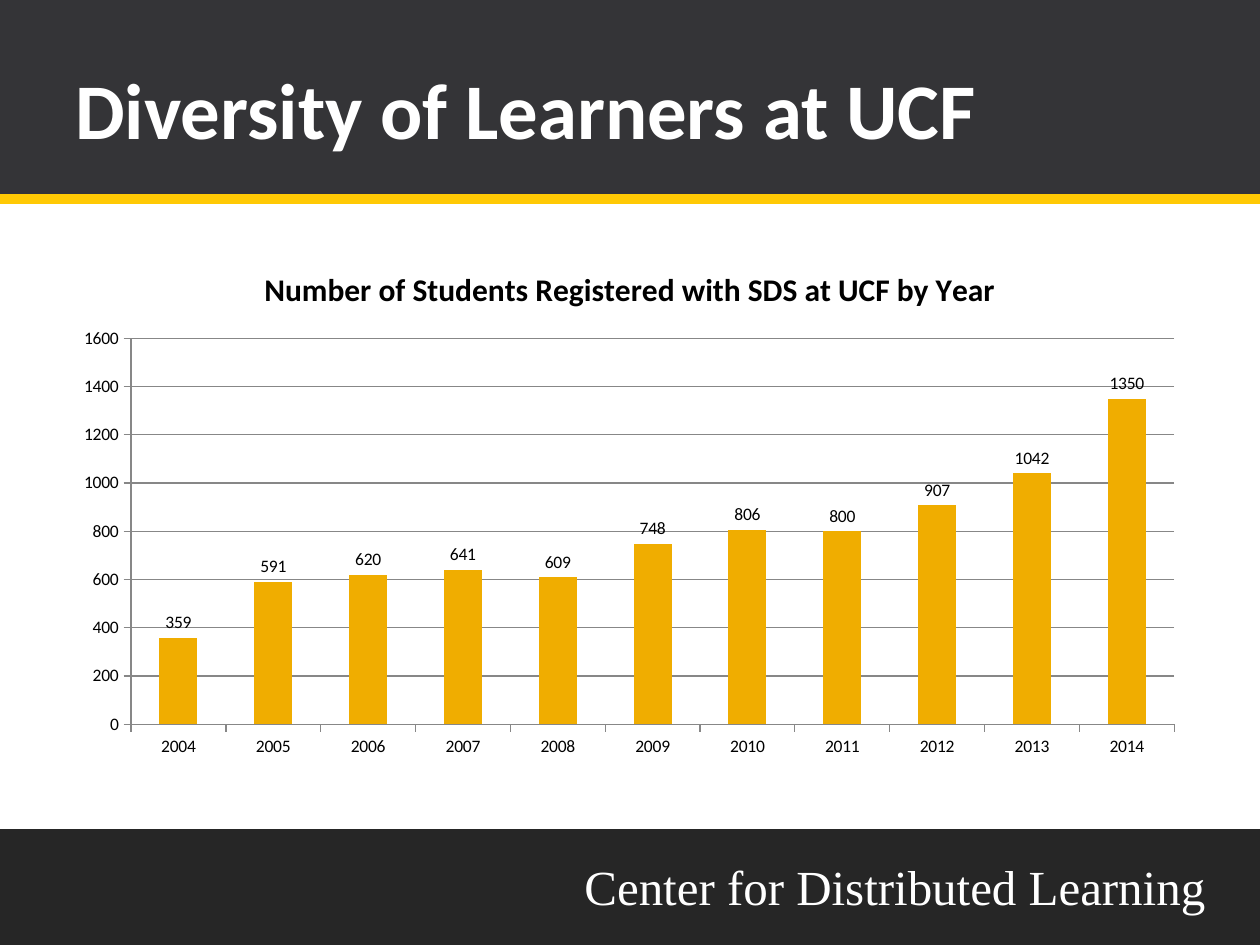
from lxml.etree import SubElement
from pptx import Presentation
from pptx.chart.data import CategoryChartData as ChartData
from pptx.dml.color import RGBColor as RGB
from pptx.enum.chart import XL_CHART_TYPE as CT, XL_LABEL_POSITION as LP, XL_TICK_MARK as TM
from pptx.enum.shapes import MSO_CONNECTOR as CONN, MSO_SHAPE as SHAPE
from pptx.enum.text import MSO_ANCHOR as ANCHOR
from pptx.oxml import parse_xml
from pptx.oxml.ns import nsdecls, qn
from pptx.util import Inches, Pt

COLORS = {"header": "343437", "footer": "262626", "gold": "FFC904", "bar": "F0AD00",
          "white": "FFFFFF", "black": "000000", "grid": "878787"}
FORMATS = {
    "title": {"name": "Calibri", "size": Pt(45), "bold": True, "color": "white"},
    "footer": {"name": "Times New Roman", "size": Pt(28), "color": "white"},
    "chart": {"name": "Calibri", "size": Pt(10), "color": "black"},
    "chart_title": {"name": "Calibri", "size": Pt(18), "bold": True, "color": "black"},
}
STUDENTS = {"2004": 359, "2005": 591, "2006": 620, "2007": 641, "2008": 609, "2009": 748,
            "2010": 806, "2011": 800, "2012": 907, "2013": 1042, "2014": 1350}
PLOT = {"x": 0.06, "y": 0.18, "w": 0.92, "h": 0.74}


class SlideBuilder:
    """Draws styled elements on one slide, placed in inches on a 10 by 7.5 page."""

    def __init__(self, prs):
        self.s = prs.slides.add_slide(prs.slide_layouts[6])

    def style(self, font, kind):
        for key, value in FORMATS[kind].items():
            if key == "color":
                font.color.rgb = RGB.from_string(COLORS[value])
            else:
                setattr(font, key, value)

    def band(self, top, height, color):
        sp = self.s.shapes.add_shape(SHAPE.RECTANGLE, 0, Inches(top), Inches(10), Inches(height))
        sp.shadow.inherit = False
        sp.fill.solid()
        sp.fill.fore_color.rgb = RGB.from_string(COLORS[color])
        sp.line.fill.background()

    def rule(self, top, color, width):
        y = Inches(top)
        line = self.s.shapes.add_connector(CONN.STRAIGHT, 0, y, Inches(10), y)
        line.line.color.rgb = RGB.from_string(COLORS[color])
        line.line.width = Pt(width)
        SubElement(line._element.spPr, qn("a:effectLst"))

    def text(self, box, words, kind):
        tf = self.s.shapes.add_textbox(*map(Inches, box)).text_frame
        tf.word_wrap = True
        tf.vertical_anchor = ANCHOR.MIDDLE
        r = tf.paragraphs[0].add_run()
        r.text = words
        self.style(r.font, kind)

    def column_chart(self, box, title, values):
        data = ChartData()
        data.categories = list(values)
        data.add_series("Series 1", list(values.values()))
        chart = self.s.shapes.add_chart(CT.COLUMN_CLUSTERED, *map(Inches, box), data).chart
        self.style(chart.font, "chart")
        chart.has_legend = False
        chart.has_title = True
        r = chart.chart_title.text_frame.paragraphs[0].add_run()
        r.text = title
        self.style(r.font, "chart_title")
        chart.value_axis.maximum_scale = 1600
        chart.value_axis.major_unit = 200
        chart.value_axis.has_major_gridlines = True
        gridlines = chart.value_axis.major_gridlines
        for axis in (chart.category_axis, chart.value_axis):
            axis.major_tick_mark = TM.OUTSIDE
        for part in (chart.category_axis, chart.value_axis, gridlines):
            part.format.line.color.rgb = RGB.from_string(COLORS["grid"])
            part.format.line.width = Pt(0.75)
        plot = chart.plots[0]
        plot.gap_width = 150
        plot.vary_by_categories = False
        fill = plot.series[0].format.fill
        fill.solid()
        fill.fore_color.rgb = RGB.from_string(COLORS["bar"])
        plot.has_data_labels = True
        plot.data_labels.show_value = True
        plot.data_labels.position = LP.OUTSIDE_END
        self.style(plot.data_labels.font, "chart")
        self.place_plot(chart)

    def place_plot(self, chart):
        area = chart._chartSpace.chart.plotArea
        for old in area.findall(qn("c:layout")):
            area.remove(old)
        shares = "".join(f'<c:{key} val="{share}"/>' for key, share in PLOT.items())
        area.insert(0, parse_xml(
            f'<c:layout {nsdecls("c")}><c:manualLayout><c:layoutTarget val="inner"/>'
            f'<c:xMode val="edge"/><c:yMode val="edge"/>{shares}</c:manualLayout></c:layout>'))


def main():
    prs = Presentation()
    prs.slide_width, prs.slide_height = Inches(10), Inches(7.5)
    slide = SlideBuilder(prs)
    slide.band(6.58, 0.92, "footer")
    slide.text((4.54, 6.75, 5.42, 0.57), "Center for Distributed Learning", "footer")
    slide.band(0, 1.58, "header")
    slide.rule(1.58, "gold", 6)
    slide.text((0.5, 0.17, 9, 1.37), "Diversity of Learners at UCF", "title")
    slide.column_chart((0.5, 1.94, 9, 4.14),
                       "Number of Students Registered with SDS at UCF by Year", STUDENTS)
    prs.save("out.pptx")


if __name__ == "__main__":
    main()
